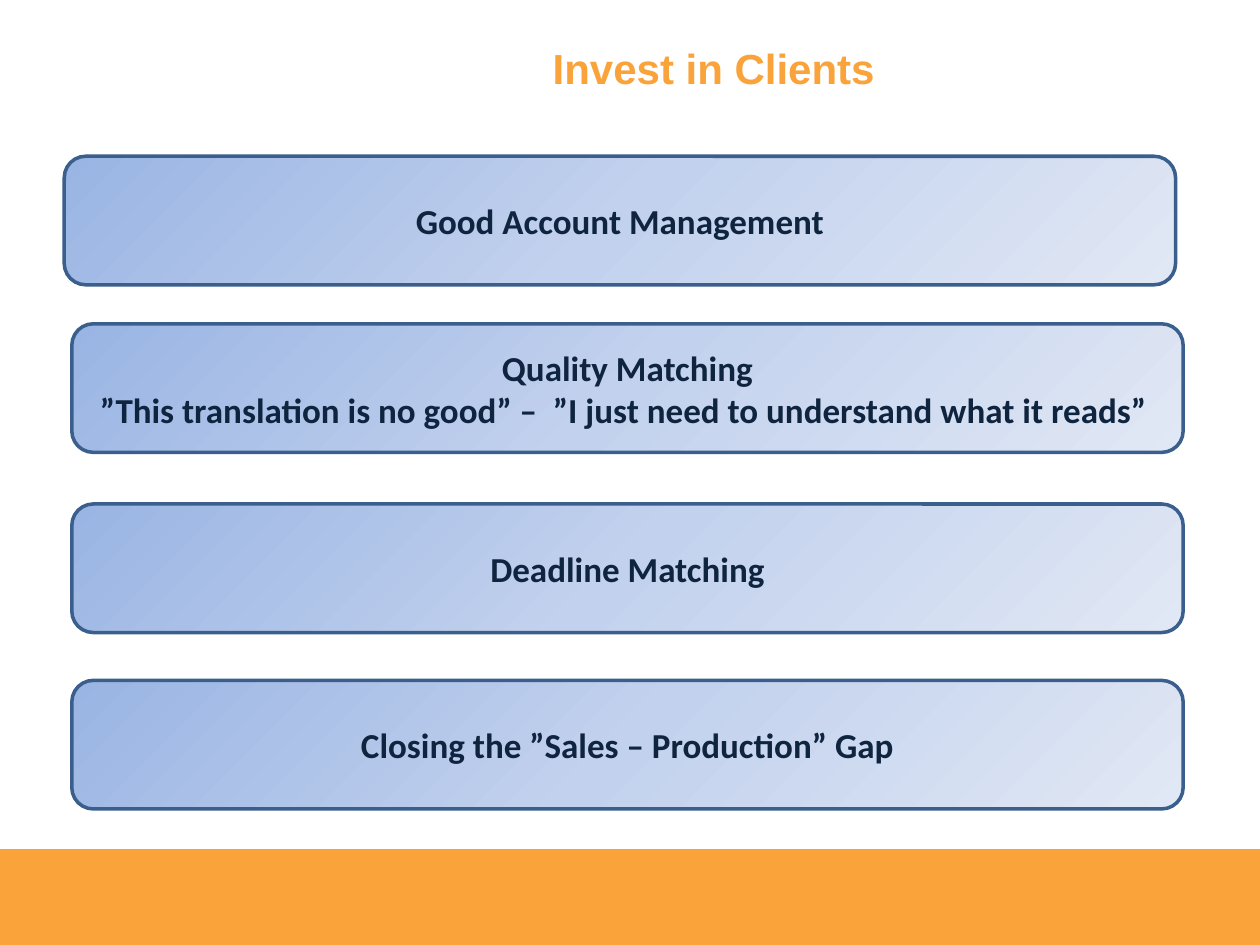
import copy

import pptx
import pptx.dml.color
import pptx.enum.shapes
import pptx.enum.text
import pptx.util

SLIDE_WIDTH, SLIDE_HEIGHT = 10, 7.5
ORANGE, NAVY, BORDER = "FAA33A", "0F243E", "3A5F8C"
GRADIENT = [(0, "9AB5E4"), (0.5, "C2D1ED"), (1, "E1E8F5")]
BAND_TOP = 6.74
CARD_WIDTH, CARD_HEIGHT = 8.82, 1.02

# Left, top and lines of each card
CARDS = [
    (0.51, 1.24, ["Good Account Management"]),
    (0.57, 2.57, ["Quality Matching",
                  "”This translation is no good” –  ”I just need to understand what it reads” "]),
    (0.57, 4.0, ["Deadline Matching"]),
    (0.57, 5.4, ["Closing the ”Sales – Production” Gap"]),
]


def color(hex_value):
    return pptx.dml.color.RGBColor.from_string(hex_value)


def inches(*lengths):
    return [pptx.util.Inches(length) for length in lengths]


def write_lines(shape, lines, font_name, size, hex_value):
    frame = shape.text_frame
    frame.word_wrap = True
    frame.vertical_anchor = pptx.enum.text.MSO_ANCHOR.MIDDLE
    for index, line in enumerate(lines):
        paragraph = frame.add_paragraph() if index else frame.paragraphs[0]
        paragraph.alignment = pptx.enum.text.PP_ALIGN.CENTER
        run = paragraph.add_run()
        run.text = line
        run.font.name = font_name
        run.font.size = pptx.util.Pt(size)
        run.font.bold = True
        run.font.color.rgb = color(hex_value)


def add_title(slide, text):
    title = slide.shapes.title
    title.left, title.top, title.width, title.height = inches(1.83, 0.24, 7.67, 0.59)
    write_lines(title, [text], "Arial", 24, ORANGE)


def add_band(slide):
    band = slide.shapes.add_shape(
        pptx.enum.shapes.MSO_SHAPE.RECTANGLE,
        *inches(0, BAND_TOP, SLIDE_WIDTH, SLIDE_HEIGHT - BAND_TOP))
    band.shadow.inherit = False
    band.fill.solid()
    band.fill.fore_color.rgb = color(ORANGE)
    band.line.fill.background()


def fill_gradient(shape):
    shape.fill.gradient()
    shape.fill.gradient_angle = 315  # counter-clockwise: top left to bottom right
    # The default gradient has two stops; a third one is needed
    stop_list = shape.element.spPr.find(".//" + pptx.oxml.ns.qn("a:gsLst"))
    stop_list.append(copy.deepcopy(stop_list[-1]))
    for element, (position, _) in zip(stop_list, GRADIENT):
        element.set("pos", str(int(position * 100000)))
    for stop, (_, hex_value) in zip(shape.fill.gradient_stops, GRADIENT):
        stop.color.rgb = color(hex_value)


def add_card(slide, left, top, lines):
    card = slide.shapes.add_shape(
        pptx.enum.shapes.MSO_SHAPE.ROUNDED_RECTANGLE,
        *inches(left, top, CARD_WIDTH, CARD_HEIGHT))
    card.shadow.inherit = False
    fill_gradient(card)
    card.line.color.rgb = color(BORDER)
    card.line.width = pptx.util.Pt(2)
    write_lines(card, lines, "Calibri", 20, NAVY)


def main():
    presentation = pptx.Presentation()
    presentation.slide_width, presentation.slide_height = inches(SLIDE_WIDTH, SLIDE_HEIGHT)
    slide = presentation.slides.add_slide(presentation.slide_layouts[5])
    add_band(slide)
    add_title(slide, "Invest in Clients")
    for left, top, lines in CARDS:
        add_card(slide, left, top, lines)
    presentation.save("out.pptx")


if __name__ == "__main__":
    main()
